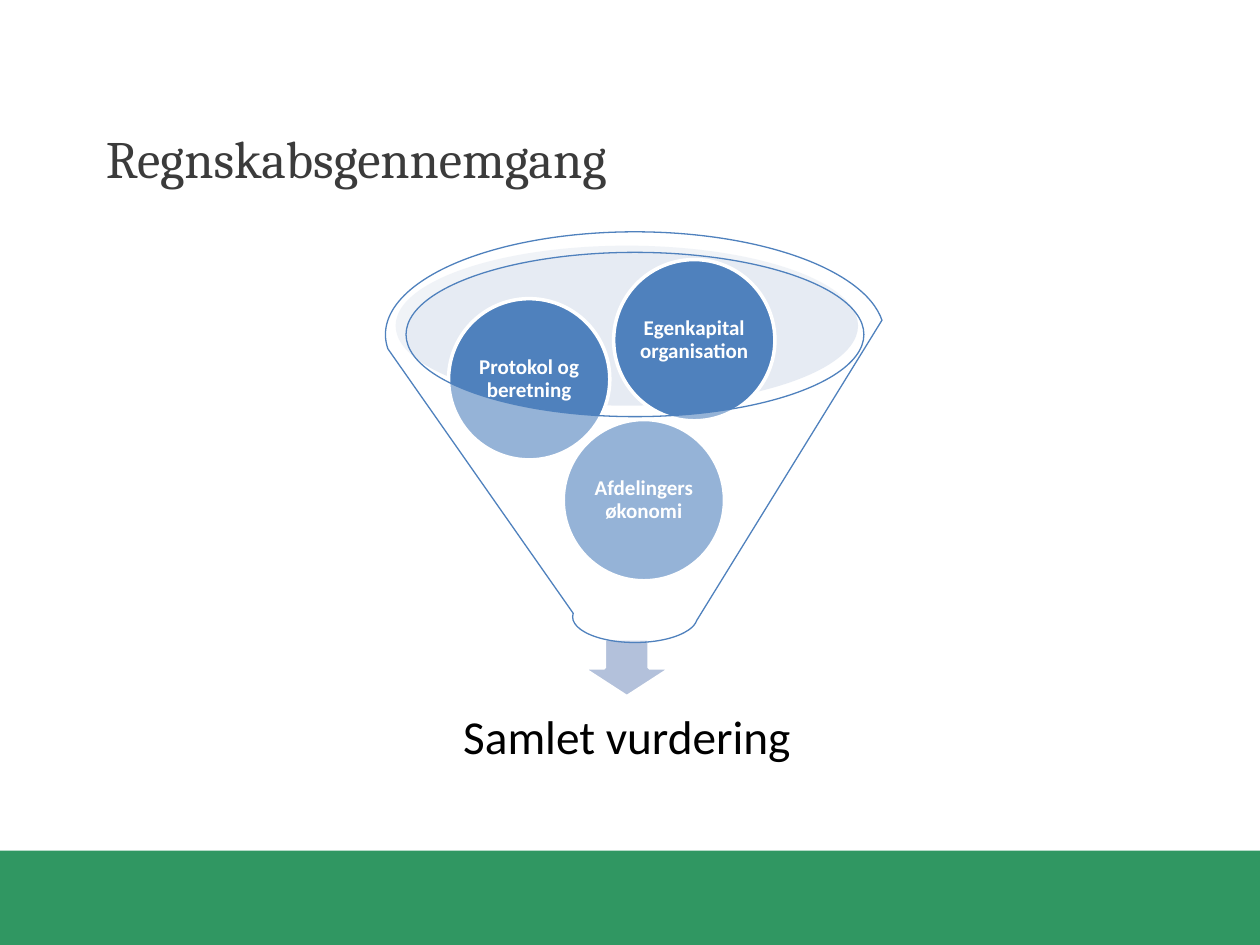
from lxml import etree
from pptx import Presentation
from pptx.dml.color import RGBColor
from pptx.enum.shapes import MSO_SHAPE
from pptx.enum.text import MSO_ANCHOR, MSO_AUTO_SIZE, PP_ALIGN
from pptx.oxml.ns import qn
from pptx.util import Inches, Pt

RECTANGLE, OVAL = MSO_SHAPE.RECTANGLE, MSO_SHAPE.OVAL
DOWN_ARROW, FUNNEL = MSO_SHAPE.DOWN_ARROW, MSO_SHAPE.FUNNEL
MIDDLE, BOTTOM = MSO_ANCHOR.MIDDLE, MSO_ANCHOR.BOTTOM
LEFT, CENTER = PP_ALIGN.LEFT, PP_ALIGN.CENTER
NO_AUTOFIT = MSO_AUTO_SIZE.NONE
TITLE_ONLY = 5


def color(hex_string):
    return RGBColor.from_string(hex_string)


class FunnelSlide:
    heading_font = "Cambria"
    body_font = "Calibri"
    blue = "4F81BD"
    white = "FFFFFF"
    dark = "3B3B3B"
    green = "309762"

    def __init__(self, presentation):
        self.slide = presentation.slides.add_slide(presentation.slide_layouts[TITLE_ONLY])

    def set_text(self, shape, text, size, font_name, text_color, bold=False,
                 alignment=CENTER, anchor=MIDDLE, inset=None, line_spacing=0.9):
        frame = shape.text_frame
        frame.auto_size = NO_AUTOFIT
        frame.word_wrap = True
        frame.vertical_anchor = anchor
        if inset is not None:
            frame.margin_left = frame.margin_right = Inches(inset)
            frame.margin_top = frame.margin_bottom = Inches(inset)
        paragraph = frame.paragraphs[0]
        paragraph.alignment = alignment
        paragraph.line_spacing = line_spacing
        run = paragraph.add_run()
        run.text = text
        run.font.name = font_name
        run.font.size = Pt(size)
        run.font.bold = bold
        run.font.color.rgb = color(text_color)

    def title(self, text, left, top, width, height):
        title = self.slide.shapes.title
        title.left, title.top = Inches(left), Inches(top)
        title.width, title.height = Inches(width), Inches(height)
        self.set_text(title, text, 30, self.heading_font, self.dark,
                      alignment=LEFT, anchor=BOTTOM, line_spacing=1.0)

    def shape(self, kind, left, top, width, height, fill,
              opacity=None, line=None, line_width=2):
        """Add a preset shape; opacity is a percentage."""
        shape = self.slide.shapes.add_shape(
            kind, Inches(left), Inches(top), Inches(width), Inches(height))
        shape.shadow.inherit = False
        shape.fill.solid()
        shape.fill.fore_color.rgb = color(fill)
        if opacity is not None:
            properties = shape.element.spPr
            fill_color = properties.find(qn("a:solidFill"))[0]
            etree.SubElement(fill_color, qn("a:alpha")).set("val", str(opacity * 1000))
        if line is None:
            shape.line.fill.background()
        else:
            shape.line.color.rgb = color(line)
            shape.line.width = Pt(line_width)
        return shape

    def ball(self, text, left, top, diameter=1.28):
        ball = self.shape(OVAL, left, top, diameter, diameter, self.blue, line=self.white)
        self.set_text(ball, text, 12, self.body_font, self.white, bold=True, inset=0.02)

    def caption(self, text, left, top, width, height):
        box = self.slide.shapes.add_textbox(
            Inches(left), Inches(top), Inches(width), Inches(height))
        self.set_text(box, text, 27, self.body_font, "000000", inset=0.21)


def main():
    presentation = Presentation()
    presentation.slide_width, presentation.slide_height = Inches(10), Inches(7.5)
    page = FunnelSlide(presentation)

    page.shape(RECTANGLE, 0, 6.75, 10, 0.75, page.green)
    page.title("Regnskabsgennemgang", 0.74, 0.3, 8.48, 1.25)

    page.shape(OVAL, 3.14, 1.95, 3.67, 1.27, "C2CDE1", opacity=40)
    page.shape(DOWN_ARROW, 4.62, 5.07, 0.71, 0.46, "B3C1DB", line=page.white)
    page.caption("Samlet vurdering", 3.27, 5.44, 3.41, 0.85)
    for text, left, top in (
        ("Afdelingers økonomi", 4.47, 3.33),
        ("Protokol og beretning", 3.56, 2.37),
        ("Egenkapital organisation", 4.87, 2.06),
    ):
        page.ball(text, left, top)
    page.shape(FUNNEL, 3.06, 1.84, 3.96, 3.26, page.white,
               opacity=40, line=page.blue, line_width=0.75)

    presentation.save("out.pptx")


if __name__ == "__main__":
    main()
